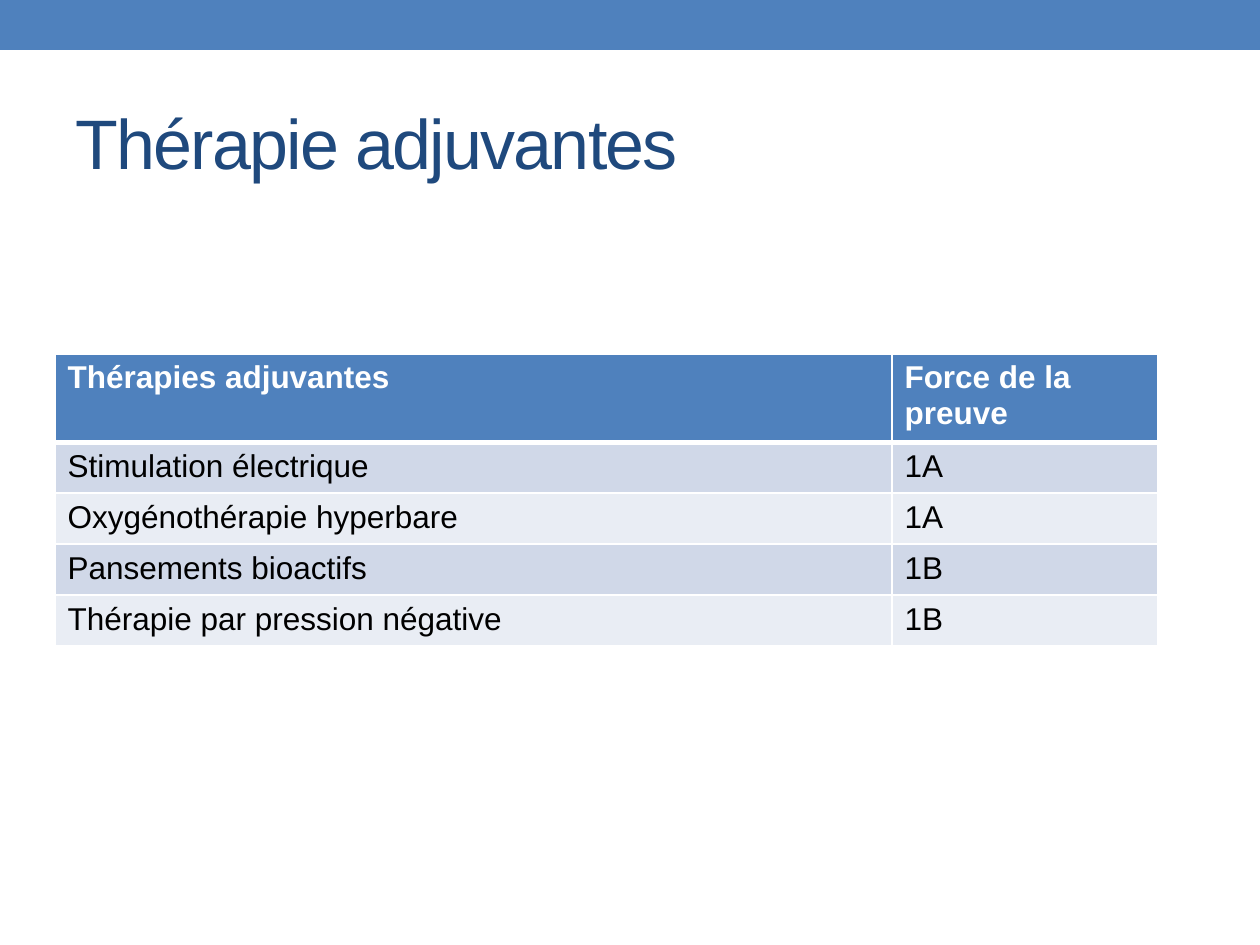
import pptx
import pptx.util
import pptx.dml.color
import pptx.enum.shapes
import pptx.enum.text
import pptx.oxml.ns
from lxml import etree

# Content
TITLE = "Thérapie adjuvantes"
ROWS = [
    ("Thérapies adjuvantes", "Force de la preuve"),
    ("Stimulation électrique", "1A"),
    ("Oxygénothérapie hyperbare", "1A"),
    ("Pansements bioactifs", "1B"),
    ("Thérapie par pression négative", "1B"),
]

THEME = {
    "font": "Arial", "title_size": 40, "table_size": 18,
    "accent": "4F81BD", "title": "1F497D", "white": "FFFFFF", "black": "000000",
    "bands": ("D0D8E8", "E9EDF4"),
}

# Layout in px, 126 to the inch
SCALE = 914400 // 126
SLIDE = (1260, 945)
BAND_H = 50
TITLE_BOX = (63, 73, 1134, 136)
TABLE_AT = (55, 354)
COL_W = (837, 266)
HEAD_H, ROW_H = 82, 51


def px(*values):
    return [pptx.util.Emu(v * SCALE) for v in values]


def rgb(color):
    return pptx.dml.color.RGBColor.from_string(color)


def set_text(tf, text, size, color, bold=False, spacing=None):
    tf.word_wrap = True
    r = tf.paragraphs[0].add_run()
    r.text = text
    r.font.name = THEME["font"]
    r.font.size = pptx.util.Pt(size)
    r.font.bold = bold
    r.font.color.rgb = rgb(color)
    if spacing is not None:
        r.font._element.set("spc", str(spacing * 100))


def set_borders(cell, color, **widths):
    tcPr = cell._tc.get_or_add_tcPr()
    qn = pptx.oxml.ns.qn
    for side in "LRTB":
        ln = etree.SubElement(tcPr, qn("a:ln" + side), w=str(pptx.util.Pt(widths.get(side, 1))))
        fill = etree.SubElement(ln, qn("a:solidFill"))
        etree.SubElement(fill, qn("a:srgbClr"), val=color)


prs = pptx.Presentation()
prs.slide_width, prs.slide_height = px(*SLIDE)
s = prs.slides.add_slide(prs.slide_layouts[6])

# Top band
sp = s.shapes.add_shape(pptx.enum.shapes.MSO_SHAPE.RECTANGLE, *px(0, 0, SLIDE[0], BAND_H))
sp.shadow.inherit = False
sp.fill.solid()
sp.fill.fore_color.rgb = rgb(THEME["accent"])
sp.line.fill.background()

# Title
tf = s.shapes.add_textbox(*px(*TITLE_BOX)).text_frame
tf.vertical_anchor = pptx.enum.text.MSO_ANCHOR.MIDDLE
set_text(tf, TITLE, THEME["title_size"], THEME["title"], spacing=-1)

# Table
height = HEAD_H + ROW_H * (len(ROWS) - 1)
table = s.shapes.add_table(len(ROWS), len(COL_W), *px(*TABLE_AT, sum(COL_W), height)).table
for column, width in zip(table.columns, px(*COL_W)):
    column.width = width
for i, row in enumerate(ROWS):
    head = i == 0
    table.rows[i].height = px(HEAD_H if head else ROW_H)[0]
    for j, text in enumerate(row):
        cell = table.cell(i, j)
        set_borders(cell, THEME["white"], B=3 if head else 1, T=3 if i == 1 else 1)
        cell.fill.solid()
        cell.fill.fore_color.rgb = rgb(THEME["accent"] if head else THEME["bands"][(i - 1) % 2])
        set_text(cell.text_frame, text, THEME["table_size"],
                 THEME["white"] if head else THEME["black"], bold=head)

prs.save("out.pptx")
